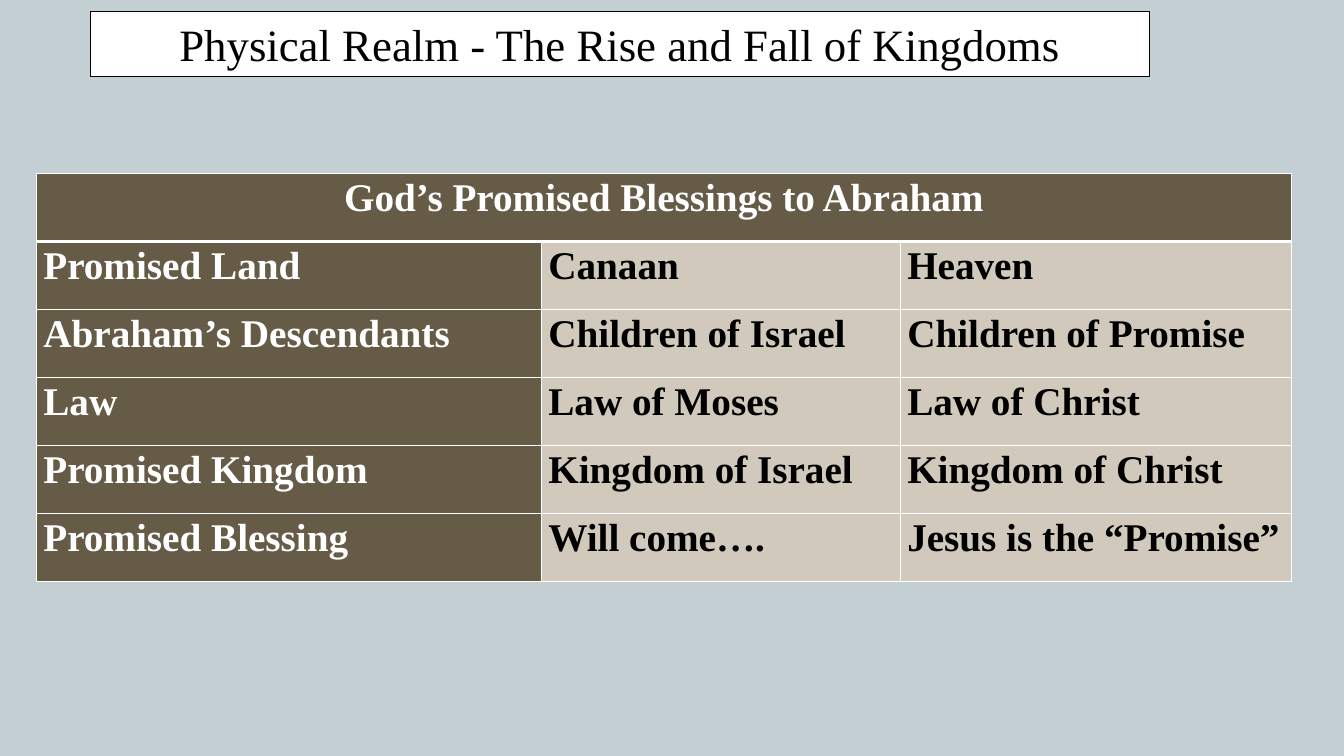
import lxml.etree
import pptx
import pptx.dml.color
import pptx.enum.text
import pptx.oxml.ns
import pptx.util

Pt = pptx.util.Pt
FONT = "Times New Roman"
BACKGROUND, BROWN, BEIGE, WHITE, BLACK = "C3CFD3", "655B46", "D1CABC", "FFFFFF", "000000"
CENTER = pptx.enum.text.PP_ALIGN.CENTER
LEFT = pptx.enum.text.PP_ALIGN.LEFT
HEADING = "God’s Promised Blessings to Abraham"
ROWS = [
    ("Promised Land", "Canaan", "Heaven"),
    ("Abraham’s Descendants", "Children of Israel", "Children of Promise"),
    ("Law", "Law of Moses", "Law of Christ"),
    ("Promised Kingdom", "Kingdom of Israel", "Kingdom of Christ"),
    ("Promised Blessing", "Will come….", "Jesus is the “Promise”"),
]
COLUMN_SHARES = (0.4024, 0.286, 0.3116)


def set_format(target, values):
    """Set each named attribute of the target."""
    for name, value in values.items():
        setattr(target, name, value)


def set_color(color_format, color):
    """Give a colour format the hex colour."""
    color_format.rgb = pptx.dml.color.RGBColor.from_string(color)


def set_fill(fill, color):
    """Make a fill solid in the hex colour."""
    fill.solid()
    set_color(fill.fore_color, color)


def write_text(text_frame, text, size, color, bold, paragraph_format):
    """Write one formatted paragraph into a text frame."""
    paragraph = text_frame.paragraphs[0]
    set_format(paragraph, paragraph_format)
    run = paragraph.add_run()
    run.text = text
    set_format(run.font, {"name": FONT, "size": Pt(size), "bold": bold})
    set_color(run.font.color, color)


def set_borders(cell, widths):
    """Draw white borders on the named sides of a cell."""
    properties = cell._tc.get_or_add_tcPr()
    for index, (side, width) in enumerate(widths.items()):
        line = lxml.etree.Element(pptx.oxml.ns.qn(f"a:ln{side}"), w=str(Pt(width)))
        fill = lxml.etree.SubElement(line, pptx.oxml.ns.qn("a:solidFill"))
        lxml.etree.SubElement(fill, pptx.oxml.ns.qn("a:srgbClr"), val=WHITE)
        properties.insert(index, line)


def add_title(slide, left, top, width, height):
    """Place the boxed title."""
    title = slide.shapes.title
    set_format(title, {"left": Pt(left), "top": Pt(top), "width": Pt(width), "height": Pt(height)})
    set_fill(title.fill, WHITE)
    set_fill(title.line.fill, BLACK)
    title.line.width = Pt(0.75)
    set_format(title.text_frame, {
        "word_wrap": True,
        "auto_size": pptx.enum.text.MSO_AUTO_SIZE.NONE,
        "vertical_anchor": pptx.enum.text.MSO_ANCHOR.MIDDLE,
    })
    write_text(title.text_frame, "Physical Realm - The Rise and Fall of Kingdoms", 32, BLACK, False,
               {"alignment": CENTER, "line_spacing": 1.0, "space_before": Pt(0)})


def add_blessings_table(slide, left, top, width, height):
    """Place the table of promises under its merged heading."""
    contents = [(HEADING, "", "")] + ROWS
    table = slide.shapes.add_table(len(contents), len(COLUMN_SHARES),
                                   Pt(left), Pt(top), Pt(width), Pt(height)).table
    set_format(table, {"horz_banding": False, "first_col": True})
    for column, share in zip(table.columns, COLUMN_SHARES):
        column.width = Pt(width * share)
    table.cell(0, 0).merge(table.cell(0, len(COLUMN_SHARES) - 1))
    for row_index, texts in enumerate(contents):
        table.rows[row_index].height = Pt(height / len(contents))
        for column_index, text in enumerate(texts):
            cell = table.cell(row_index, column_index)
            is_header = row_index == 0 or column_index == 0
            set_format(cell, {"margin_left": Pt(5), "margin_right": Pt(5),
                              "margin_top": 0, "margin_bottom": 0})
            set_fill(cell.fill, BROWN if is_header else BEIGE)
            set_borders(cell, {"L": 1, "R": 1, "T": 3 if row_index == 1 else 1,
                               "B": 3 if row_index == 0 else 1})
            if text:
                write_text(cell.text_frame, text, 28, WHITE if is_header else BLACK, True,
                           {"alignment": LEFT if row_index else CENTER, "line_spacing": 1.07})


def main():
    """Build and save the slide."""
    presentation = pptx.Presentation()
    set_format(presentation, {"slide_width": Pt(960), "slide_height": Pt(540)})
    slide = presentation.slides.add_slide(presentation.slide_layouts.get_by_name("Title Only"))
    set_fill(slide.background.fill, BACKGROUND)
    add_title(slide, 64.8, 8.4, 756, 46)
    add_blessings_table(slide, 26, 123.8, 896.4, 292)
    presentation.save("out.pptx")


if __name__ == "__main__":
    main()
